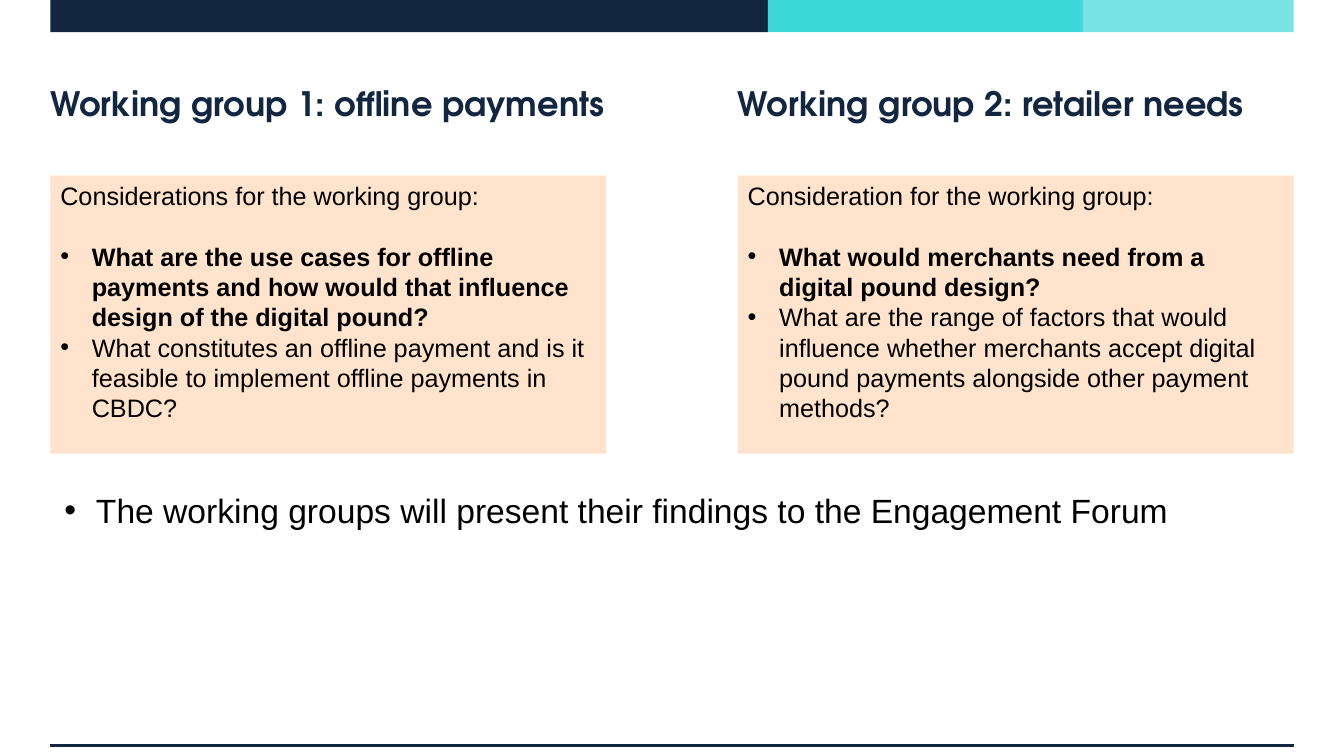
from lxml.etree import SubElement
from pptx import Presentation
from pptx.dml.color import RGBColor
from pptx.enum.shapes import MSO_CONNECTOR, MSO_SHAPE
from pptx.enum.text import MSO_ANCHOR, PP_ALIGN
from pptx.oxml.ns import qn
from pptx.util import Pt

NAVY, TEAL, AQUA, PEACH, BLACK = "12273F", "3CD7D9", "77E3E4", "FFE3CC", "000000"
LEFT, RIGHT, INDENT = 36, 527, 22.5


def color(code):
    return RGBColor.from_string(code)


class Page:
    body, head = "Arial", "TeX Gyre Adventor"

    def __init__(self, deck):
        self.shapes = deck.slides.add_slide(deck.slide_layouts[6]).shapes

    def rect(self, x, y, w, h, fill):
        box = self.shapes.add_shape(MSO_SHAPE.RECTANGLE, Pt(x), Pt(y), Pt(w), Pt(h))
        box.shadow.inherit = False
        box.fill.solid()
        box.fill.fore_color.rgb = color(fill)
        box.line.fill.background()
        return box

    def rule(self, x, y, end):
        line = self.shapes.add_connector(MSO_CONNECTOR.STRAIGHT, Pt(x), Pt(y), Pt(end), Pt(y))
        line.line.color.rgb = color(NAVY)
        line.line.width = Pt(2.25)
        SubElement(line._element.spPr, qn("a:effectLst"))

    def text(self, x, y, w, h):
        box = self.shapes.add_textbox(Pt(x), Pt(y), Pt(w), Pt(h))
        box.text_frame.word_wrap = True
        return box.text_frame

    def label(self, para, words, size, font=body, ink=BLACK, bold=False):
        para.text = words
        para.alignment = PP_ALIGN.LEFT
        para.font.name = font
        para.font.size = Pt(size)
        para.font.bold = bold
        para.font.color.rgb = color(ink)

    def bullet(self, para, words, size, bold=False):
        props = para._p.get_or_add_pPr()
        props.set("marL", str(Pt(INDENT)))
        props.set("indent", str(-Pt(INDENT)))
        SubElement(props, qn("a:buFont"), typeface=self.body)
        SubElement(props, qn("a:buChar"), char="•")
        self.label(para, words, size, bold=bold)

    def title(self, x, words):
        frame = self.text(x, 40.5, 427, 66)
        frame.margin_left = frame.margin_right = 0
        frame.margin_top = frame.margin_bottom = 0
        frame.vertical_anchor = MSO_ANCHOR.MIDDLE
        self.label(frame.paragraphs[0], words, 24, self.head, NAVY, True)

    def panel(self, x, lead, points):
        """Shaded box with a lead line; the first point is bold."""
        frame = self.rect(x, 125.5, 397, 198.5, PEACH).text_frame
        frame.word_wrap = True
        frame.vertical_anchor = MSO_ANCHOR.TOP
        self.label(frame.paragraphs[0], lead, 18)
        for i, point in enumerate(points):
            para = frame.add_paragraph()
            if i == 0:
                para.space_before = Pt(21.6)
            self.bullet(para, point, 18, bold=i == 0)
        for para in frame.paragraphs:
            para.line_spacing = Pt(21.6)


def main():
    deck = Presentation()
    deck.slide_width, deck.slide_height = Pt(960), Pt(540)
    page = Page(deck)
    for x, end, fill in ((LEFT, 548.5, NAVY), (548.5, 773.5, TEAL), (773.5, 924, AQUA)):
        page.rect(x, 0, end - x, 23, fill)
    page.rule(LEFT, 532.5, 924)

    groups = (
        (LEFT, "Working group 1: offline payments",
         "Considerations for the working group:",
         ("What are the use cases for offline payments and how would that "
          "influence design of the digital pound?",
          "What constitutes an offline payment and is it feasible to implement "
          "offline payments in CBDC?")),
        (RIGHT, "Working group 2: retailer needs",
         "Consideration for the working group:",
         ("What would merchants need from a digital pound design?",
          "What are the range of factors that would influence whether merchants "
          "accept digital pound payments alongside other payment methods?")),
    )
    for x, name, lead, points in groups:
        page.title(x, name)
        page.panel(x, lead, points)

    note = page.text(39, 346.5, 848, 36).paragraphs[0]
    page.bullet(note, "The working groups will present their findings to the Engagement Forum", 24)
    deck.save("out.pptx")


if __name__ == "__main__":
    main()
